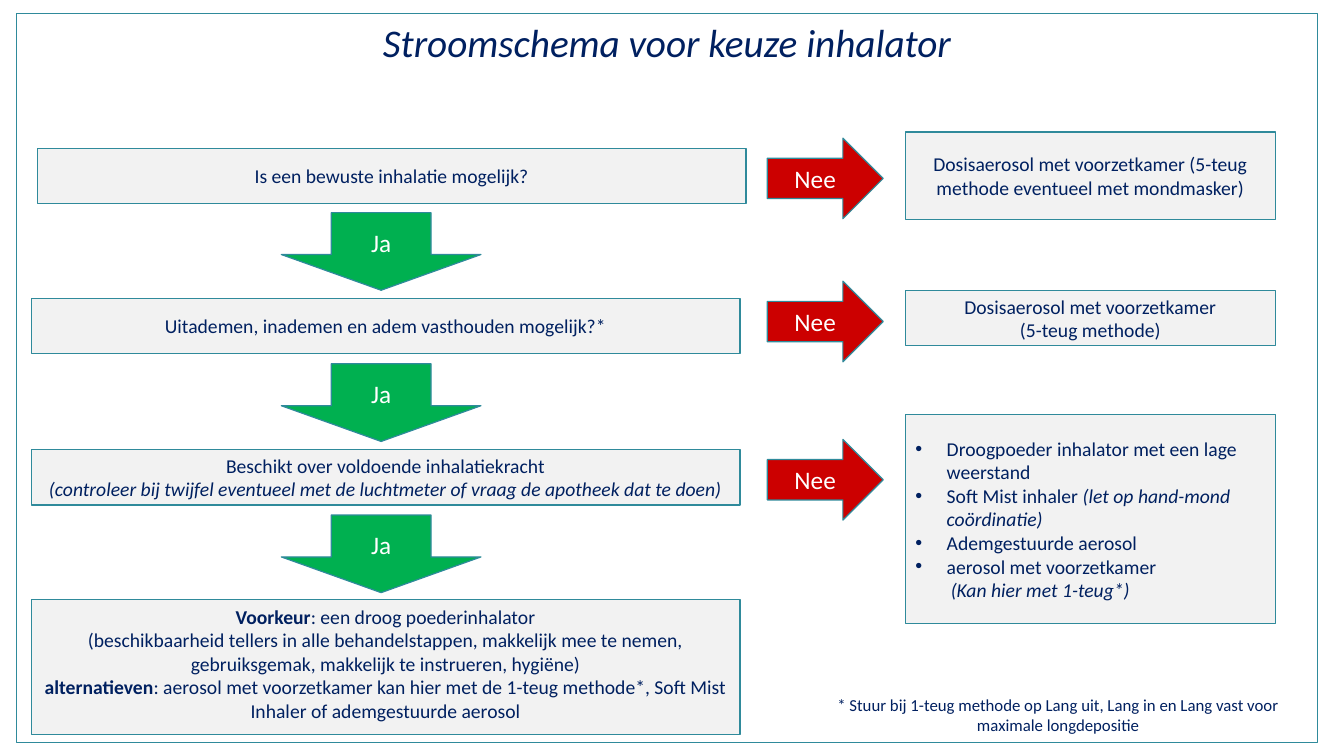
"""Build the flow chart for choosing an inhaler."""
from lxml import etree
from pptx import Presentation
from pptx import util as u
from pptx.dml import color
from pptx.enum import shapes, text
from pptx.oxml import ns

COLORS = {"navy": "002060", "teal": "2F8A9B", "grey": "F2F2F2", "white": "FFFFFF",
          "green": "00B050", "red": "CC0000"}
CENTER, LEFT = text.PP_ALIGN.CENTER, text.PP_ALIGN.LEFT
TOP, MIDDLE = text.MSO_ANCHOR.TOP, text.MSO_ANCHOR.MIDDLE
KINDS = shapes.MSO_SHAPE


def paint(box, fill):
    box.fill.solid()
    box.fill.fore_color.rgb = color.RGBColor.from_string(COLORS[fill])
    box.line.color.rgb = color.RGBColor.from_string(COLORS["teal"])
    box.line.width = u.Pt(0.85)


def write(box, paragraphs, size=14, ink="navy", align=CENTER, anchor=MIDDLE):
    frame = box.text_frame
    frame.word_wrap = True
    frame.auto_size = text.MSO_AUTO_SIZE.NONE
    frame.vertical_anchor = anchor
    for number, spans in enumerate(paragraphs):
        para = frame.paragraphs[0] if number == 0 else frame.add_paragraph()
        para.alignment = align
        para.space_before = u.Pt(0)
        for words, style in spans:
            span = para.add_run()
            span.text = words
            span.font.name = "Calibri"
            span.font.size = u.Pt(size)
            span.font.bold = style == "bold"
            span.font.italic = style == "italic"
            span.font.color.rgb = color.RGBColor.from_string(COLORS[ink])


deck = Presentation()
deck.slide_width, deck.slide_height = u.Inches(13.33), u.Inches(7.5)
page = deck.slides.add_slide(deck.slide_layouts[1])

title, options = page.placeholders
title.left, title.top = u.Inches(0.16), u.Inches(0.13)
title.width, title.height = u.Inches(12.91), u.Inches(7.24)
paint(title, "white")
write(title, [[("Stroomschema voor keuze inhalator", "italic")]], size=28, anchor=TOP)

options.left, options.top = u.Inches(8.98), u.Inches(4.11)
options.width, options.height = u.Inches(3.67), u.Inches(2.08)
paint(options, "grey")
write(options, [
    [("Droogpoeder inhalator met een lage weerstand", "")],
    [("Soft Mist inhaler ", ""), ("(let op hand-mond coördinatie)", "italic")],
    [("Ademgestuurde aerosol", "")],
    [("aerosol met voorzetkamer", "")],
    [("(Kan hier met 1-teug*)", "italic")],
], align=LEFT)
*bulleted, remark = options.text_frame.paragraphs
for para in bulleted:
    props = para._p.get_or_add_pPr()
    props.set("marL", str(u.Inches(0.31)))
    props.set("indent", str(-u.Inches(0.31)))
    etree.SubElement(props, ns.qn("a:buChar")).set("char", "•")
props = remark._p.get_or_add_pPr()
props.set("marL", str(u.Inches(0.35)))
props.set("indent", "0")
etree.SubElement(props, ns.qn("a:buNone"))

boxes = [
    (0.37, 1.47, 7.03, 0.55, MIDDLE, [[("Is een bewuste inhalatie mogelijk?", "")]]),
    (0.31, 2.96, 7.03, 0.55, MIDDLE,
     [[("Uitademen, inademen en adem vasthouden mogelijk?*", "")]]),
    (0.31, 4.46, 7.03, 0.55, MIDDLE, [
        [("Beschikt over voldoende inhalatiekracht", "")],
        [("(controleer bij twijfel eventueel met de luchtmeter of vraag de apotheek "
          "dat te doen)", "italic")]]),
    (0.31, 5.95, 7.03, 1.34, TOP, [
        [("Voorkeur", "bold"), (": een droog poederinhalator", "")],
        [("(beschikbaarheid tellers in alle behandelstappen, makkelijk mee te nemen, "
          "gebruiksgemak, makkelijk te instrueren, hygiëne)", "")],
        [("alternatieven", "bold"),
         (": aerosol met voorzetkamer kan hier met de 1-teug methode*, Soft Mist "
          "Inhaler of ademgestuurde aerosol", "")]]),
    (8.98, 1.31, 3.67, 0.87, MIDDLE,
     [[("Dosisaerosol met voorzetkamer (5-teug methode eventueel met mondmasker)", "")]]),
    (8.98, 2.88, 3.67, 0.55, MIDDLE,
     [[("Dosisaerosol met voorzetkamer", "")], [("(5-teug methode)", "")]]),
]
for left, top, width, height, anchor, paragraphs in boxes:
    box = page.shapes.add_shape(KINDS.RECTANGLE, u.Inches(left), u.Inches(top),
                                u.Inches(width), u.Inches(height))
    box.shadow.inherit = False
    paint(box, "grey")
    write(box, paragraphs, anchor=anchor)

arrows = [(KINDS.DOWN_ARROW, 2.79, 2.11 + 1.5 * step, 1.98, 0.77, "green", "Ja")
          for step in range(3)]
arrows += [(KINDS.RIGHT_ARROW, 7.61, top, 1.15, 0.8, "red", "Nee")
           for top in (1.37, 2.79, 4.36)]
for kind, left, top, width, height, fill, answer in arrows:
    arrow = page.shapes.add_shape(kind, u.Inches(left), u.Inches(top),
                                  u.Inches(width), u.Inches(height))
    arrow.shadow.inherit = False
    if kind == KINDS.DOWN_ARROW:
        arrow.adjustments[1] = 0.46
    paint(arrow, fill)
    write(arrow, [[(answer, "")]], size=18, ink="white")

footnote = page.shapes.add_textbox(u.Inches(8.03), u.Inches(6.66),
                                   u.Inches(4.93), u.Inches(0.87))
write(footnote, [[("* Stuur bij 1-teug methode op Lang uit, Lang in en Lang vast voor "
                   "maximale longdepositie", "")]], size=12)

deck.save("out.pptx")
